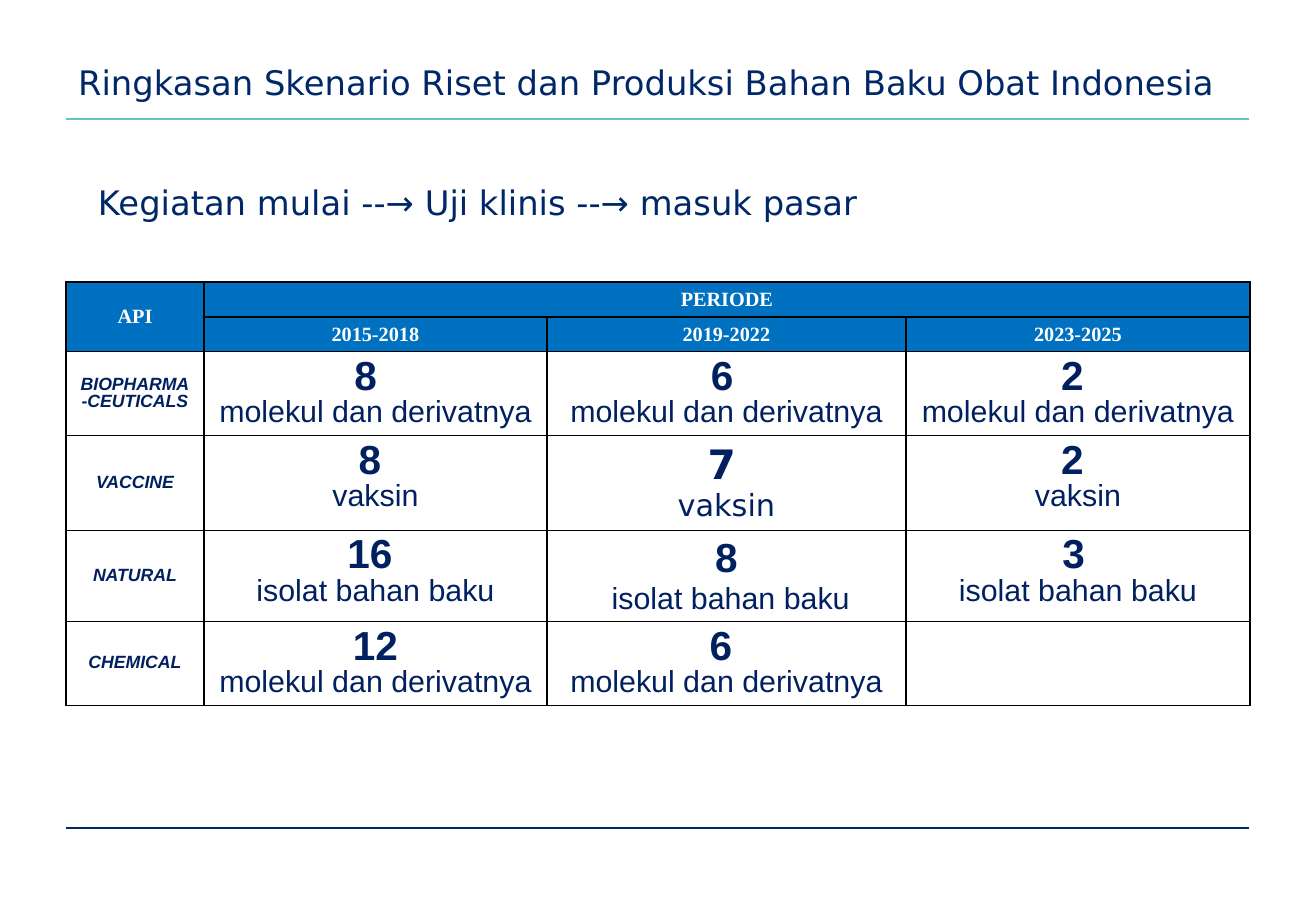
from pptx import Presentation
from pptx import util as u
from pptx.dml.color import RGBColor
from pptx.enum import shapes, text
from pptx.oxml import parse_xml
from pptx.oxml.ns import nsdecls

PX = 7526
NAVY, INK, BLUE, TEAL, WHITE = "002868", "002060", "0070C0", "69C0C9", "FFFFFF"
SANS, ARIAL, TIMES = "DejaVu Sans", "Arial", "Times New Roman"
LEFT, WIDE = 66, 1183
COLS = [138, 343, 359, 344]
ROWS = [35, 34, 84, 94, 91, 84]
YEARS = ["2015-2018", "2019-2022", "2023-2025"]
MOLS, VACS, ISOS = "molekul dan derivatnya", "vaksin", "isolat bahan baku"
DATA = [
    ("BIOPHARMA-CEUTICALS", [("8 ", " ", MOLS), ("6", " ", MOLS), ("2 ", "", MOLS)]),
    ("VACCINE", [("8 ", "", VACS), ("7", " ", VACS, SANS), ("2 ", "", VACS)]),
    ("NATURAL", [("16 ", "", ISOS), ("8", "", " " + ISOS, ARIAL), ("3", " ", ISOS)]),
    ("CHEMICAL", [("12", "", MOLS), ("6 ", "", MOLS)]),
]


def px(num):
    """Turn pixels into EMU."""
    return u.Emu(num * PX)


def rgb(code):
    """Turn a hex string into a colour."""
    return RGBColor.from_string(code)


def style(para, size, face, color, bold=False, slant=False):
    """Set the font of a paragraph."""
    font = para.font
    font.size, font.name = u.Pt(size), face
    font.bold, font.italic = bold, slant
    font.color.rgb = rgb(color)


def head(shape, words, left, top):
    """Write a heading line at the bottom of its box."""
    shape.left, shape.top, shape.width, shape.height = map(px, (left, top, WIDE, 108))
    frame = shape.text_frame
    frame.word_wrap = True
    frame.auto_size = text.MSO_AUTO_SIZE.NONE
    frame.vertical_anchor = text.MSO_ANCHOR.BOTTOM
    para = frame.paragraphs[0]
    para.text, para.alignment = words, text.PP_ALIGN.LEFT
    style(para, 20, SANS, NAVY)


def rule(slide, top, color):
    """Draw a full-width line without shadow."""
    line = slide.shapes.add_connector(
        shapes.MSO_CONNECTOR.STRAIGHT, px(LEFT), px(top), px(LEFT + WIDE), px(top))
    line.line.color.rgb = rgb(color)
    line.line.width = u.Pt(1.5)
    line._element.spPr.append(parse_xml(f"<a:effectLst {nsdecls('a')}/>"))


def paint(cell, color):
    """Give a cell black borders and a fill."""
    for side in ("lnL", "lnR", "lnT", "lnB"):
        cell._tc.get_or_add_tcPr().append(parse_xml(
            f'<a:{side} {nsdecls("a")} w="12700"><a:solidFill>'
            f'<a:srgbClr val="000000"/></a:solidFill></a:{side}>'))
    cell.fill.solid()
    cell.fill.fore_color.rgb = rgb(color)


def label(cell, words, *look, space=1.0):
    """Write one centred line in a cell."""
    cell.vertical_anchor = text.MSO_ANCHOR.MIDDLE
    para = cell.text_frame.paragraphs[0]
    para.text, para.alignment, para.line_spacing = words, text.PP_ALIGN.CENTER, space
    style(para, *look)


def count(cell, big, tail, noun, face=None):
    """Write a large number above its noun; a given face means looser lines."""
    first = cell.text_frame.paragraphs[0]
    second = cell.text_frame.add_paragraph()
    for para in (first, second):
        para.alignment = text.PP_ALIGN.CENTER
        style(para, 18, face or ARIAL, INK)
        if not face:
            para.line_spacing = 0.9
            prop = para._p.get_or_add_pPr()
            prop.set("marL", str(px(23)))
            prop.set("indent", str(px(-23)))
    run = first.add_run()
    run.text, run.font.size, run.font.bold = big, u.Pt(24), True
    if tail:
        first.add_run().text = tail
    second.add_run().text = noun


def grid(slide):
    """Build the table of periods."""
    table = slide.shapes.add_table(
        len(ROWS), len(COLS), px(LEFT), px(282), px(sum(COLS)), px(sum(ROWS))).table
    table.first_row = table.horz_banding = False
    for col, wide in zip(table.columns, COLS):
        col.width = px(wide)
    for num, (row, high) in enumerate(zip(table.rows, ROWS)):
        row.height = px(high)
        for cell in row.cells:
            paint(cell, BLUE if num < 2 else WHITE)
    table.cell(0, 0).merge(table.cell(1, 0))
    table.cell(0, 1).merge(table.cell(0, 3))
    tops = [(0, 0, "API"), (0, 1, "PERIODE")]
    tops += [(1, num, year) for num, year in enumerate(YEARS, 1)]
    for row, col, words in tops:
        label(table.cell(row, col), words, 12, TIMES, WHITE, True)
    for row, (name, items) in enumerate(DATA, 2):
        label(table.cell(row, 0), name, 10.5, ARIAL, INK, True, True, space=0.9)
        for col, item in enumerate(items, 1):
            count(table.cell(row, col), *item)


def main():
    """Build and save the slide."""
    deck = Presentation()
    deck.slide_width, deck.slide_height = px(1316), px(911)
    slide = deck.slides.add_slide(deck.slide_layouts[5])
    rule(slide, 119, TEAL)
    rule(slide, 828, NAVY)
    grid(slide)
    head(slide.shapes.title,
         "Ringkasan Skenario Riset dan Produksi Bahan Baku Obat Indonesia", LEFT, 0)
    head(slide.shapes.add_textbox(0, 0, 0, 0),
         "Kegiatan mulai --→ Uji klinis --→ masuk pasar", 86, 120)
    deck.save("out.pptx")


if __name__ == "__main__":
    main()
